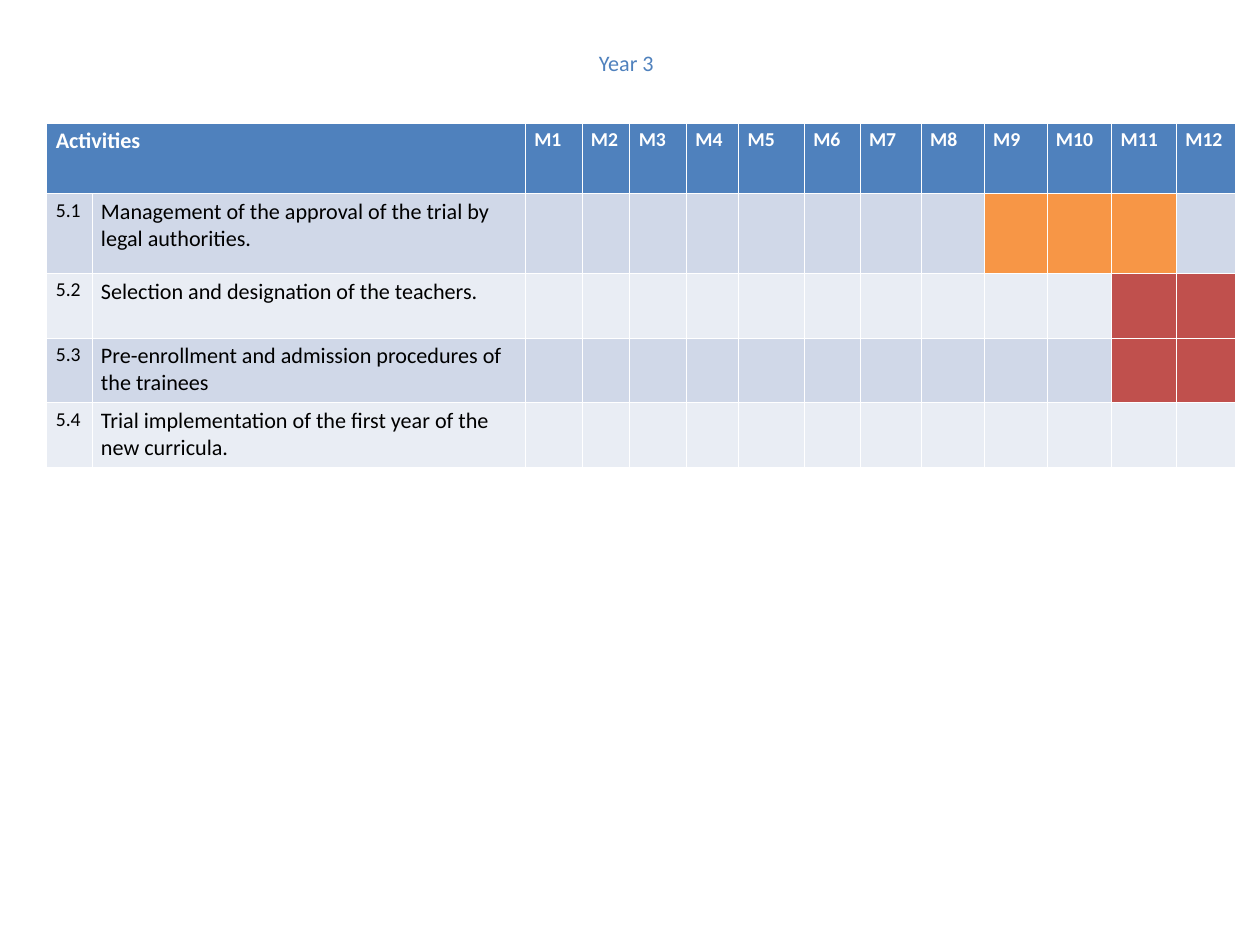
from pptx import Presentation
from pptx.dml.color import RGBColor
from pptx.enum.text import MSO_ANCHOR, PP_ALIGN
from pptx.util import Inches, Pt

FONT = "Calibri"
BLUE = RGBColor(0x4F, 0x81, 0xBD)
BAND_DARK = RGBColor(0xD0, 0xD8, 0xE8)
BAND_LIGHT = RGBColor(0xE9, 0xED, 0xF4)
ORANGE = RGBColor(0xF7, 0x96, 0x46)
RED = RGBColor(0xC0, 0x50, 0x4D)
WHITE = RGBColor(0xFF, 0xFF, 0xFF)
BLACK = RGBColor(0, 0, 0)

NUMBER_WIDTH, ACTIVITY_WIDTH = 0.51, 4.89
MONTH_WIDTHS = [0.64, 0.54, 0.64, 0.59, 0.74, 0.63, 0.69, 0.71, 0.71, 0.73, 0.73, 0.67]
COLUMN_WIDTHS = [NUMBER_WIDTH, ACTIVITY_WIDTH] + MONTH_WIDTHS
ROW_HEIGHTS = [0.8, 0.9, 0.73, 0.73, 0.73]
FIRST_MONTH_COLUMN = 2

# Number, activity, scheduled months, colour of the scheduled months
ACTIVITIES = [
    ("5.1", "Management of the approval of the trial by legal authorities.", (9, 10, 11), ORANGE),
    ("5.2", "Selection and designation of the teachers.", (11, 12), RED),
    ("5.3", "Pre-enrollment and admission procedures of the trainees", (11, 12), RED),
    ("5.4", "Trial implementation of the first year of the new curricula.", (), None),
]


def add_run(paragraph, text, size, color, bold=False):
    run = paragraph.add_run()
    run.text = text
    run.font.name = FONT
    run.font.size = Pt(size)
    run.font.bold = bold
    run.font.color.rgb = color


def fill_cell(cell, color):
    cell.fill.solid()
    cell.fill.fore_color.rgb = color


def add_title(slide, text):
    title = slide.shapes.title
    title.left, title.top = Inches(6.66), Inches(0.51)
    title.width, title.height = Inches(7.3), Inches(0.4)
    title.text_frame.vertical_anchor = MSO_ANCHOR.TOP
    paragraph = title.text_frame.paragraphs[0]
    paragraph.alignment = PP_ALIGN.LEFT
    add_run(paragraph, text, 18, BLUE)


def add_schedule_grid(slide):
    schedule = slide.shapes.add_table(
        len(ROW_HEIGHTS), len(COLUMN_WIDTHS), Inches(0.53), Inches(1.39),
        Inches(sum(COLUMN_WIDTHS)), Inches(sum(ROW_HEIGHTS))).table
    for column, width in zip(schedule.columns, COLUMN_WIDTHS):
        column.width = Inches(width)
    for row, height in zip(schedule.rows, ROW_HEIGHTS):
        row.height = Inches(height)
    return schedule


def write_header(schedule):
    for cell in schedule.rows[0].cells:
        fill_cell(cell, BLUE)
    heading = schedule.cell(0, 0)
    heading.merge(schedule.cell(0, 1))
    add_run(heading.text_frame.paragraphs[0], "Activities", 18, WHITE, bold=True)
    for month in range(1, len(MONTH_WIDTHS) + 1):
        cell = schedule.cell(0, FIRST_MONTH_COLUMN + month - 1)
        add_run(cell.text_frame.paragraphs[0], f"M{month}", 16, WHITE, bold=True)


def write_activity(schedule, row, number, activity, months, month_color):
    band = BAND_DARK if row % 2 else BAND_LIGHT
    for column, cell in enumerate(schedule.rows[row].cells):
        month = column - FIRST_MONTH_COLUMN + 1
        fill_cell(cell, month_color if month in months else band)
    add_run(schedule.cell(row, 0).text_frame.paragraphs[0], number, 16, BLACK)
    add_run(schedule.cell(row, 1).text_frame.paragraphs[0], activity, 18, BLACK)


def main():
    presentation = Presentation()
    presentation.slide_width = Inches(14.22)
    presentation.slide_height = Inches(10.67)
    slide = presentation.slides.add_slide(presentation.slide_layouts.get_by_name("Title Only"))
    add_title(slide, "Year 3")
    schedule = add_schedule_grid(slide)
    write_header(schedule)
    for row, activity in enumerate(ACTIVITIES, start=1):
        write_activity(schedule, row, *activity)
    presentation.save("out.pptx")


if __name__ == "__main__":
    main()
